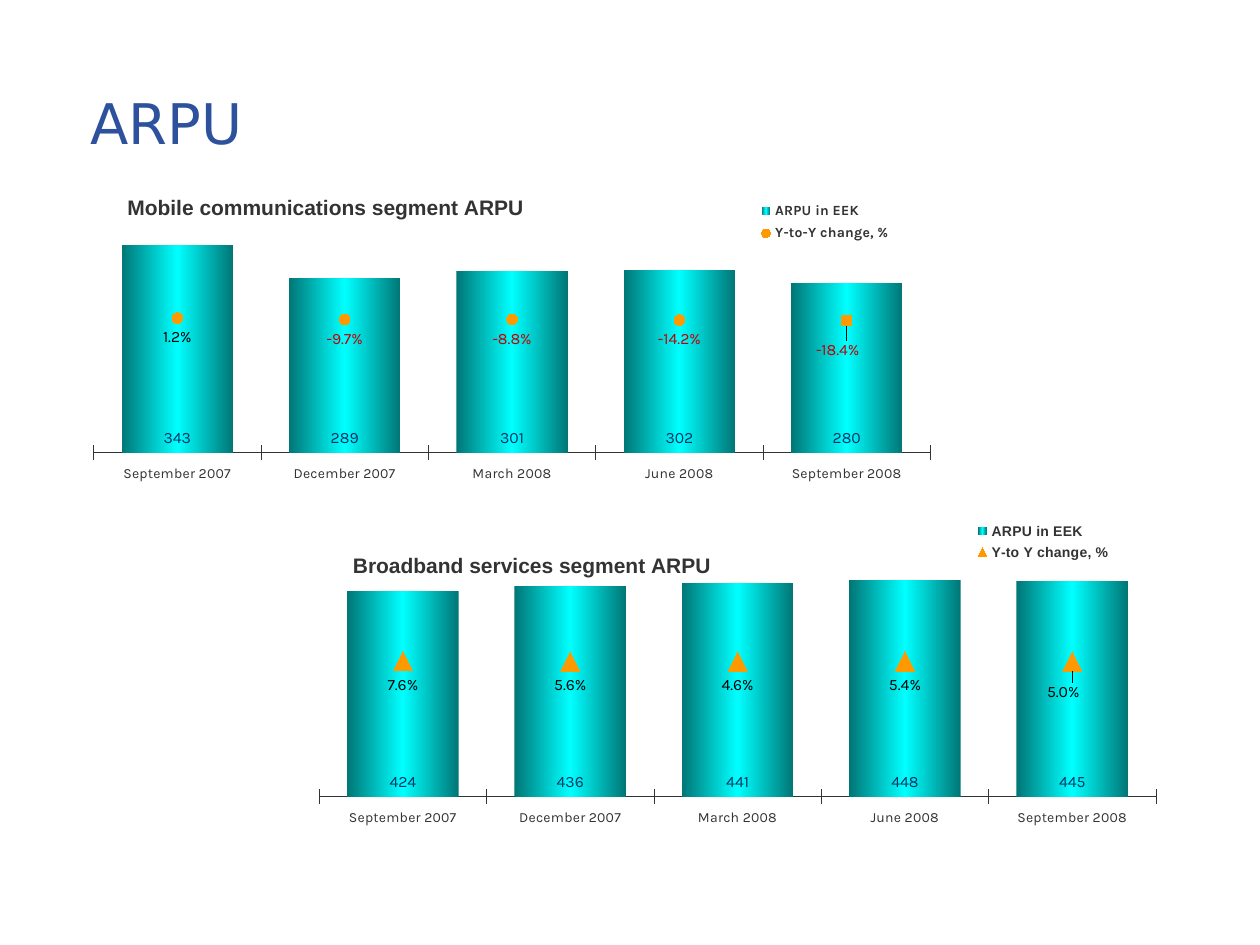
from copy import deepcopy
from dataclasses import dataclass
from typing import Any

from pptx import Presentation
from pptx.chart.data import CategoryChartData
from pptx.dml.color import RGBColor
from pptx.enum.chart import (XL_CHART_TYPE, XL_LABEL_POSITION, XL_LEGEND_POSITION,
                             XL_MARKER_STYLE, XL_TICK_LABEL_POSITION, XL_TICK_MARK)
from pptx.enum.text import MSO_ANCHOR
from pptx.oxml import parse_xml
from pptx.oxml.ns import nsdecls
from pptx.util import Inches, Pt

HUES = {"title": "2E519E", "text": "333333", "black": "000000", "value": "003366",
        "fall": "C00000", "mark": "FF9900", "edge": "007676", "glow": "00FFFF"}
DATES = ["September 2007", "December 2007", "March 2008", "June 2008", "September 2008"]
WIDTH, HEIGHT = 7.18, 2.66
PERCENT = "0.0%"


@dataclass
class Panel:
    title: str
    left: float
    top: float
    values: list[int]
    limit: int
    change: str
    rates: list[float]
    marker: Any
    size: int
    hue: str
    face: str
    title_at: tuple[float, float]
    key_at: tuple[float, float]
    shift: tuple[float, float]


PANELS = [
    Panel("Mobile communications segment ARPU", 0.55, 1.33, [343, 289, 301, 302, 280], 400,
          "Y-to-Y change, %", [0.012, -0.097, -0.088, -0.142, -0.184],
          XL_MARKER_STYLE.CIRCLE, 6, "fall", "Karla", (0.06, 0.07), (0.76, 0.09), (-0.01, 0.03)),
    Panel("Broadband services segment ARPU", 2.34, 4.06, [424, 436, 441, 448, 445], 500,
          "Y-to Y change, %", [0.076, 0.056, 0.046, 0.054, 0.05],
          XL_MARKER_STYLE.TRIANGLE, 11, "black", "Arial", (0.06, 0.11), (0.75, 0.02), (-0.01, 0.02)),
]


def color(name: str) -> RGBColor:
    return RGBColor.from_string(HUES[name])


def style(font: Any, size: float, hue: str, face: str = "Karla", bold: bool = False) -> None:
    for name, value in {"size": Pt(size), "name": face, "bold": bold}.items():
        setattr(font, name, value)
    font.color.rgb = color(hue)


def place(parent: Any, index: int, inner: bool = False, **spots: float) -> None:
    """Give a chart part a manual layout, in fractions of the chart."""
    for old in parent.xpath("./c:layout"):
        parent.remove(old)
    target = '<c:layoutTarget val="inner"/>' if inner else ""
    modes = "" if parent.tag.endswith("}dLbl") else '<c:xMode val="edge"/><c:yMode val="edge"/>'
    sizes = "".join(f'<c:{name} val="{value}"/>' for name, value in spots.items())
    parent.insert(index, parse_xml(f'<c:layout {nsdecls("c")}><c:manualLayout>{target}{modes}{sizes}'
                                   '</c:manualLayout></c:layout>'))


def split(area: Any) -> None:
    """Move the second series to a line plot on its own hidden axes."""
    ns = nsdecls("c", "a")
    line = parse_xml(f'<c:lineChart {ns}><c:grouping val="standard"/><c:varyColors val="0"/>'
                     '<c:marker val="1"/><c:axId val="501"/><c:axId val="502"/></c:lineChart>')
    bars = area.xpath("./c:barChart")[0]
    rates = bars.xpath("./c:ser")[1]
    for flag in rates.xpath("./c:invertIfNegative"):
        rates.remove(flag)
    line.insert(2, rates)
    bars.addnext(line)
    dates = parse_xml(f'<c:catAx {ns}><c:axId val="501"/><c:scaling><c:orientation val="minMax"/>'
                      '</c:scaling><c:delete val="1"/><c:axPos val="b"/><c:crossAx val="502"/></c:catAx>')
    scale = parse_xml(f'<c:valAx {ns}><c:axId val="502"/><c:scaling><c:orientation val="minMax"/>'
                      '<c:max val="8"/><c:min val="-10"/></c:scaling><c:delete val="0"/>'
                      '<c:axPos val="r"/><c:majorTickMark val="none"/><c:minorTickMark val="none"/>'
                      '<c:tickLblPos val="none"/><c:spPr><a:ln><a:noFill/></a:ln></c:spPr>'
                      '<c:crossAx val="501"/><c:crosses val="max"/></c:valAx>')
    last = area.xpath("./c:valAx")[-1]
    last.addnext(dates)
    dates.addnext(scale)


def shade(series: Any) -> None:
    fill = series.format.fill
    fill.gradient()
    fill.gradient_angle = 0
    stops = series.format.element.xpath(".//a:gsLst")[0] if hasattr(series.format, "element") \
        else series._element.xpath(".//a:gsLst")[0]
    stops.append(deepcopy(stops[0]))
    for stop, (spot, hue) in zip(fill.gradient_stops, [(0, "edge"), (0.5, "glow"), (1, "edge")]):
        stop.position = spot
        stop.color.rgb = color(hue)


def label(series: Any, form: str, spot: Any, hue: str) -> None:
    labels = series.data_labels
    for name, value in {"show_value": True, "number_format": form,
                        "number_format_is_linked": False, "position": spot}.items():
        setattr(labels, name, value)
    style(labels.font, 9, hue)


def mark(owner: Any, shape: Any, size: int) -> None:
    marker = owner.marker
    marker.style, marker.size = shape, size
    marker.format.fill.solid()
    marker.format.fill.fore_color.rgb = color("mark")
    marker.format.line.fill.background()
    owner.format.line.fill.background()


def tune(series: Any, index: int, hue: str, shift: tuple[float, float] | None = None) -> None:
    """Give one rate label its own colour and, if asked, an offset."""
    tag = series.points[index].data_label
    style(tag.font, 9, hue)
    tag.position = XL_LABEL_POSITION.BELOW
    node = series._element.xpath(f'./c:dLbls/c:dLbl[c:idx/@val="{index}"]')[0]
    node.insert(1, parse_xml(f'<c:numFmt {nsdecls("c")} formatCode="{PERCENT}" sourceLinked="0"/>'))
    if shift:
        place(node, 1, x=shift[0], y=shift[1])


def draw(slide: Any, panel: Panel) -> None:
    data = CategoryChartData()
    data.categories = DATES
    data.add_series("ARPU in EEK", panel.values, "#,##0")
    data.add_series(panel.change, panel.rates, PERCENT)
    chart = slide.shapes.add_chart(XL_CHART_TYPE.COLUMN_CLUSTERED, Inches(panel.left), Inches(panel.top),
                                   Inches(WIDTH), Inches(HEIGHT), data).chart
    style(chart.font, 8.5, "black")
    area = chart.element.xpath(".//c:plotArea")[0]
    place(area, 0, inner=True, x=0.027, y=0.129, w=0.925, h=0.722)

    axis = chart.category_axis
    axis.major_tick_mark = XL_TICK_MARK.CROSS
    axis.format.line.color.rgb = color("text")
    axis.format.line.width = Pt(0.25)
    style(axis.tick_labels.font, 8, "text")
    axis = chart.value_axis
    for name, value in {"minimum_scale": 0, "maximum_scale": panel.limit, "has_major_gridlines": False,
                        "major_tick_mark": XL_TICK_MARK.NONE,
                        "tick_label_position": XL_TICK_LABEL_POSITION.NONE}.items():
        setattr(axis, name, value)
    axis.format.line.fill.background()

    chart.has_title = True
    frame = chart.chart_title.text_frame
    frame.text = panel.title
    style(frame.paragraphs[0].runs[0].font, 12, "text", "Arial", True)
    place(chart.element.xpath(".//c:title")[0], 1, x=panel.title_at[0], y=panel.title_at[1])
    chart.has_legend = True
    chart.legend.position = XL_LEGEND_POSITION.CORNER
    chart.legend.include_in_layout = False
    style(chart.legend.font, 8, "text", panel.face, True)
    place(chart.element.xpath(".//c:legend")[0], 1, x=panel.key_at[0], y=panel.key_at[1])

    split(area)
    bars, line = chart.plots
    bars.gap_width = 50
    bars.vary_by_categories = False
    shade(bars.series[0])
    label(bars.series[0], "#,##0", XL_LABEL_POSITION.INSIDE_BASE, "value")
    rates = line.series[0]
    rates.smooth = False
    mark(rates, panel.marker, panel.size)
    label(rates, PERCENT, XL_LABEL_POSITION.BELOW, panel.hue)
    tune(rates, 0, "black")
    tune(rates, 4, panel.hue, panel.shift)
    if panel.marker == XL_MARKER_STYLE.CIRCLE:
        mark(rates.points[4], XL_MARKER_STYLE.SQUARE, panel.size)


def main() -> None:
    deck = Presentation()
    deck.slide_width, deck.slide_height = Inches(10), Inches(7.5)
    slide = deck.slides.add_slide(deck.slide_layouts[6])
    frame = slide.shapes.add_textbox(Inches(0.62), Inches(0.52), Inches(6.67), Inches(0.89)).text_frame
    frame.word_wrap = True
    frame.vertical_anchor = MSO_ANCHOR.MIDDLE
    frame.text = "ARPU"
    style(frame.paragraphs[0].runs[0].font, 32, "title", "DejaVu Sans")
    for panel in PANELS:
        draw(slide, panel)
    deck.save("out.pptx")


if __name__ == "__main__":
    main()
